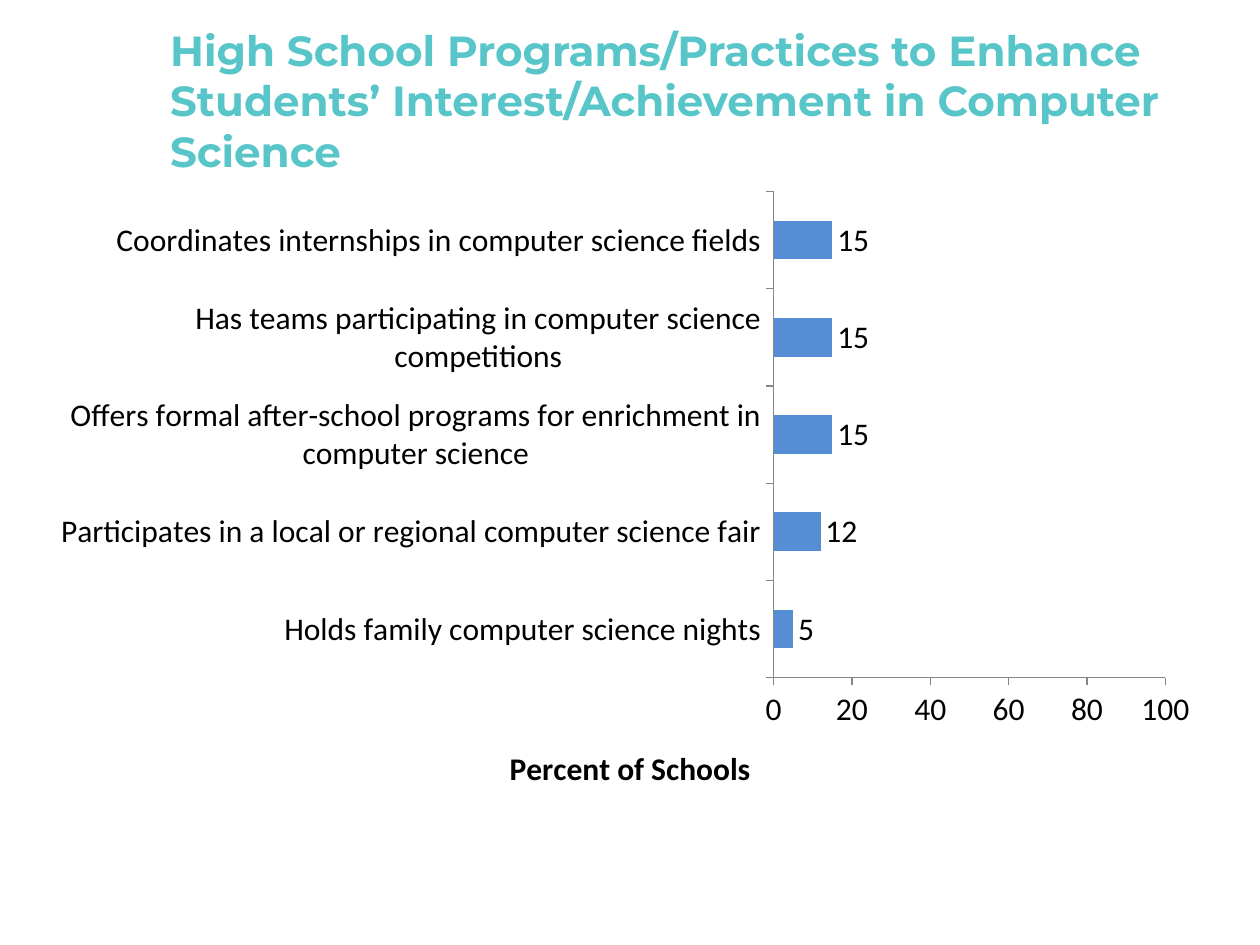
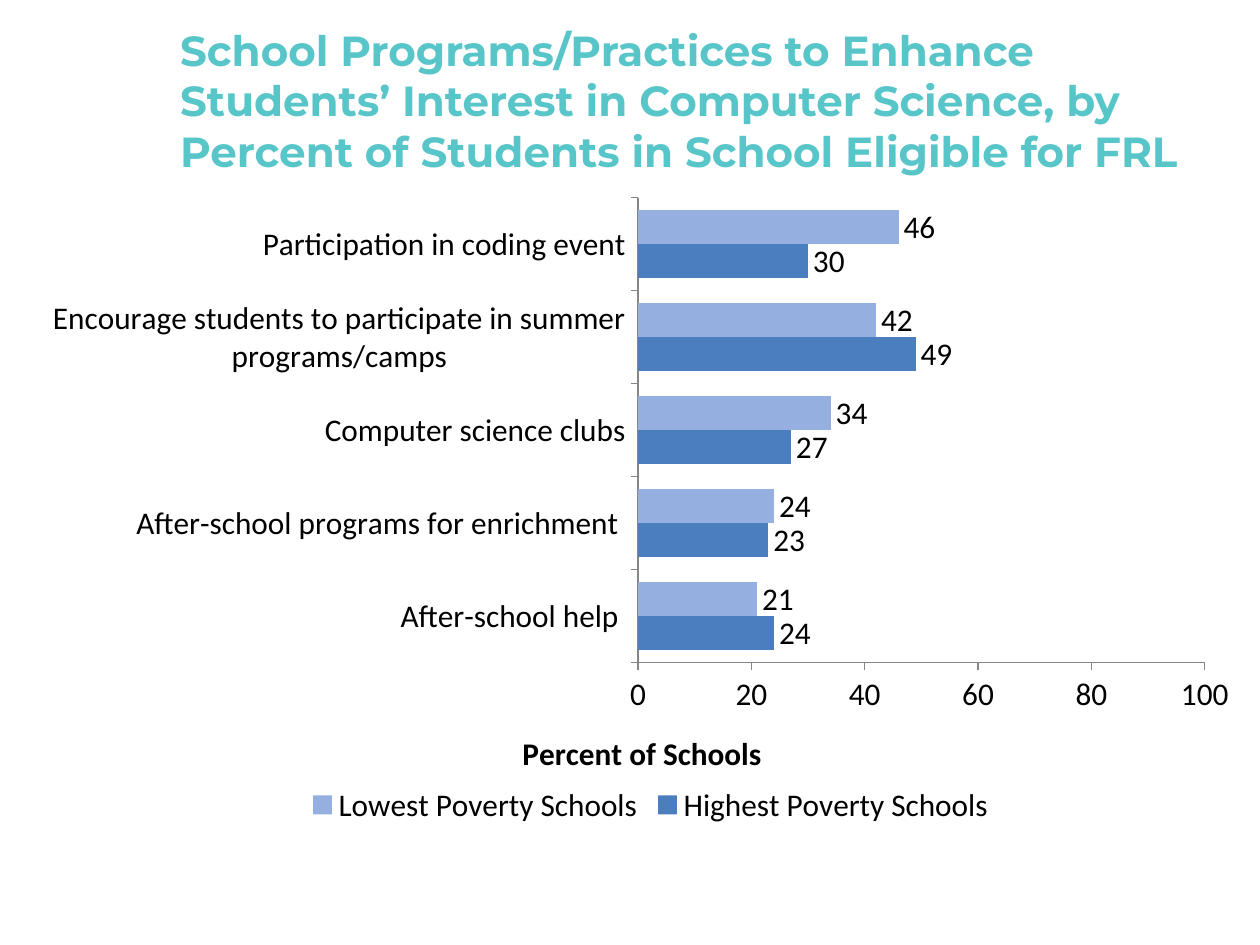
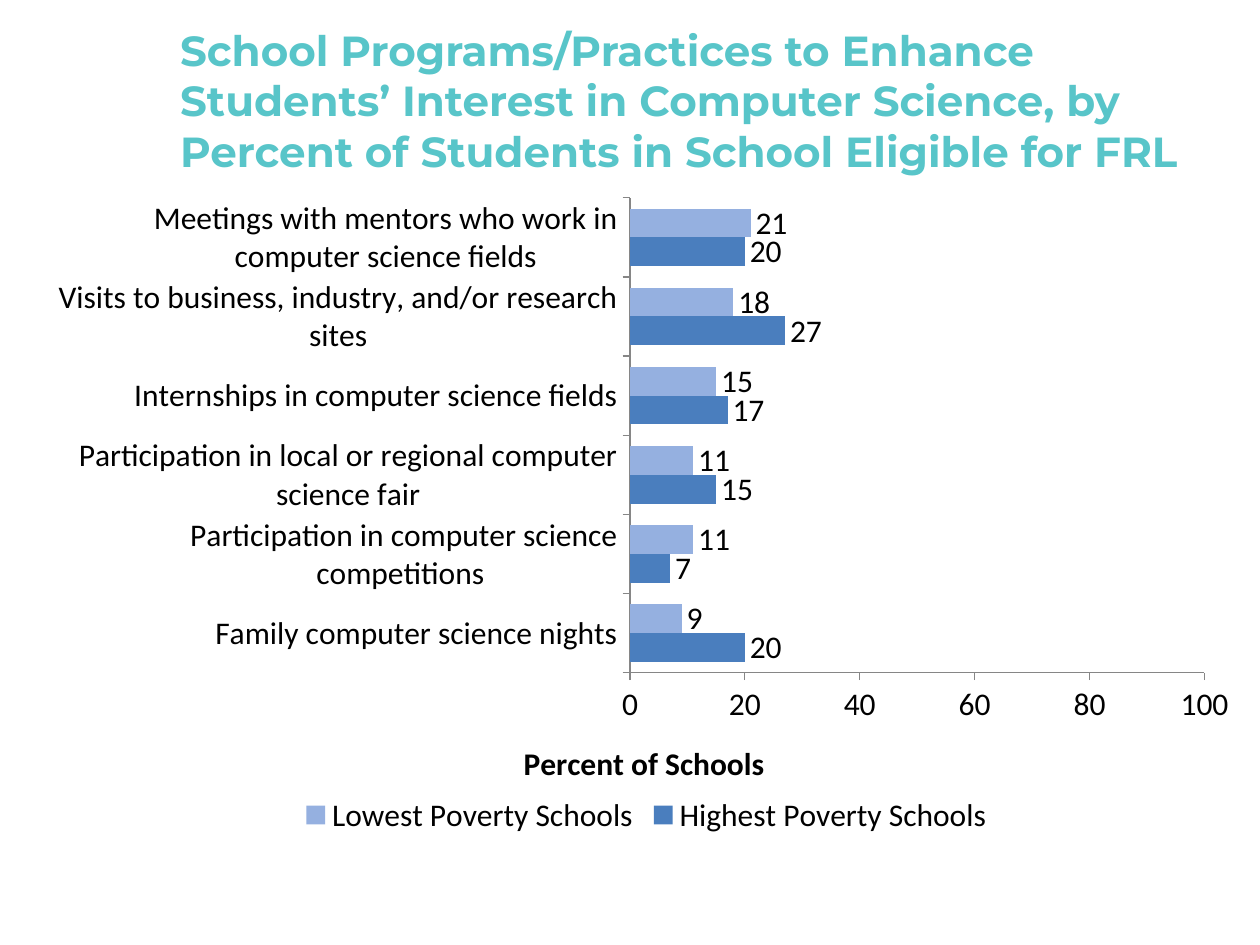
from lxml import etree
from pptx import Presentation
from pptx import util as u
from pptx.chart.data import CategoryChartData
from pptx.dml.color import RGBColor
from pptx.enum import chart as ch, text
from pptx.oxml.ns import qn

TEAL = RGBColor(0x58, 0xC5, 0xC9)
BLACK = RGBColor(0, 0, 0)
GRAY = RGBColor(0x86, 0x86, 0x86)
BLUE = RGBColor(0x55, 0x8E, 0xD5)
DARK_BLUE = RGBColor(0x4A, 0x7E, 0xBE)
LIGHT_BLUE = RGBColor(0x95, 0xB0, 0xE0)
TITLE_FONT = "Montserrat"
BODY_FONT = "Calibri"
TITLE_ONLY = 5


def set_layout(parent, index, **values):
    for old in parent.findall(qn("c:layout")):
        parent.remove(old)
    layout = etree.Element(qn("c:layout"))
    manual = etree.SubElement(layout, qn("c:manualLayout"))
    for tag, value in values.items():
        etree.SubElement(manual, qn(f"c:{tag}"), val=str(value))
    parent.insert(index, layout)


class Deck:
    def __init__(self):
        self.prs = Presentation()
        self.prs.slide_width = u.Inches(10)
        self.prs.slide_height = u.Inches(7.5)
        self.s = None

    def slide(self):
        self.s = self.prs.slides.add_slide(self.prs.slide_layouts[TITLE_ONLY])

    def title(self, words, left, width):
        sp = self.s.shapes.title
        sp.left, sp.top = u.Inches(left), u.Inches(0.17)
        sp.width, sp.height = u.Inches(width), u.Inches(1.25)
        tf = sp.text_frame
        tf.word_wrap = True
        tf.auto_size = text.MSO_AUTO_SIZE.NONE
        tf.vertical_anchor = text.MSO_ANCHOR.MIDDLE
        p = tf.paragraphs[0]
        p.alignment = text.PP_ALIGN.LEFT
        r = p.add_run()
        r.text = words
        r.font.name, r.font.size, r.font.bold = TITLE_FONT, u.Pt(24), True
        r.font.color.rgb = TEAL

    def style_font(self, font, bold=False):
        font.name, font.size, font.bold = BODY_FONT, u.Pt(18), bold
        font.color.rgb = BLACK

    def style_axis(self, axis):
        axis.has_major_gridlines = False
        axis.major_tick_mark = ch.XL_TICK_MARK.OUTSIDE
        axis.minor_tick_mark = ch.XL_TICK_MARK.NONE
        axis.format.line.color.rgb = GRAY
        axis.format.line.width = u.Pt(0.75)
        self.style_font(axis.tick_labels.font)

    def bar_chart(self, box, plot_box, caption_at, cats, series, gap):
        left, top, width, height = box
        data = CategoryChartData(number_format="0")
        data.categories = cats
        for name, values, _ in series:
            data.add_series(name, values)
        chart = self.s.shapes.add_chart(
            ch.XL_CHART_TYPE.BAR_CLUSTERED, *map(u.Inches, box), data).chart
        self.style_font(chart.font)
        chart.has_title = False
        chart.has_legend = len(series) > 1
        if chart.has_legend:
            chart.legend.position = ch.XL_LEGEND_POSITION.BOTTOM
            chart.legend.include_in_layout = False
            self.style_font(chart.legend.font)

        plot = chart.plots[0]
        plot.gap_width, plot.overlap = gap, 0
        plot.vary_by_categories = False
        for ser, (_, _, color) in zip(plot.series, series):
            ser.format.fill.solid()
            ser.format.fill.fore_color.rgb = color
            ser.invert_if_negative = False
            labels = ser.data_labels
            labels.show_value = True
            labels.position = ch.XL_LABEL_POSITION.OUTSIDE_END
            self.style_font(labels.font)

        axis = chart.value_axis
        self.style_axis(chart.category_axis)
        self.style_axis(axis)
        axis.minimum_scale, axis.maximum_scale, axis.major_unit = 0, 100, 20
        r = axis.axis_title.text_frame.paragraphs[0].add_run()
        r.text = "Percent of Schools"
        self.style_font(r.font, bold=True)

        x, y, w, h = plot_box
        area = chart.element.find(".//" + qn("c:plotArea"))
        set_layout(area, 0, layoutTarget="inner", xMode="edge", yMode="edge",
                   x=(x - left) / width, y=(y - top) / height,
                   w=w / width, h=h / height)
        x, y = caption_at
        set_layout(axis.axis_title.element, 1, xMode="edge", yMode="edge",
                   x=(x - left) / width, y=(y - top) / height)


def poverty_slide(deck, height, plot_box, caption_at, cats, highest, lowest):
    deck.slide()
    deck.title("School Programs/Practices to Enhance Students’ Interest in Computer "
               "Science, by Percent of Students in School Eligible for FRL", 1.33, 8.58)
    deck.bar_chart((0.42, 1.42, 9.42, height), plot_box, caption_at, cats,
                   [("Highest Poverty Schools", highest, DARK_BLUE),
                    ("Lowest Poverty Schools", lowest, LIGHT_BLUE)], 75)


def main():
    deck = Deck()
    deck.slide()
    deck.title("High School Programs/Practices to Enhance Students’ "
               "Interest/Achievement in Computer Science", 1.25, 8.25)
    deck.bar_chart(
        (0.38, 1.42, 9.25, 5.08), (6.14, 1.52, 3.11, 3.86), (4, 5.88),
        ["Holds family computer science nights",
         "Participates in a local or regional computer science fair",
         "Offers formal after-school programs for enrichment in computer science",
         "Has teams participating in computer science competitions",
         "Coordinates internships in computer science fields"],
        [("Series 1", (5, 12, 15, 15, 15), BLUE)], 150)

    poverty_slide(
        deck, 5.17, (5.03, 1.57, 4.53, 3.69), (4.06, 5.76),
        ["After-school help ",
         "After-school programs for enrichment ",
         "Computer science clubs",
         "Encourage students to participate in summer programs/camps",
         "Participation in coding event"],
        (24, 23, 27, 49, 30), (21, 24, 34, 42, 46))

    poverty_slide(
        deck, 5.25, (5, 1.57, 4.56, 3.77), (4.11, 5.84),
        ["Family computer science nights",
         "Participation in computer science competitions ",
         "Participation in local or regional computer science fair",
         "Internships in computer science fields",
         "Visits to business, industry, and/or research sites",
         "Meetings with mentors who work in computer science fields"],
        (20, 7, 15, 17, 27, 20), (9, 11, 11, 15, 18, 21))
    deck.prs.save("out.pptx")


if __name__ == "__main__":
    main()
